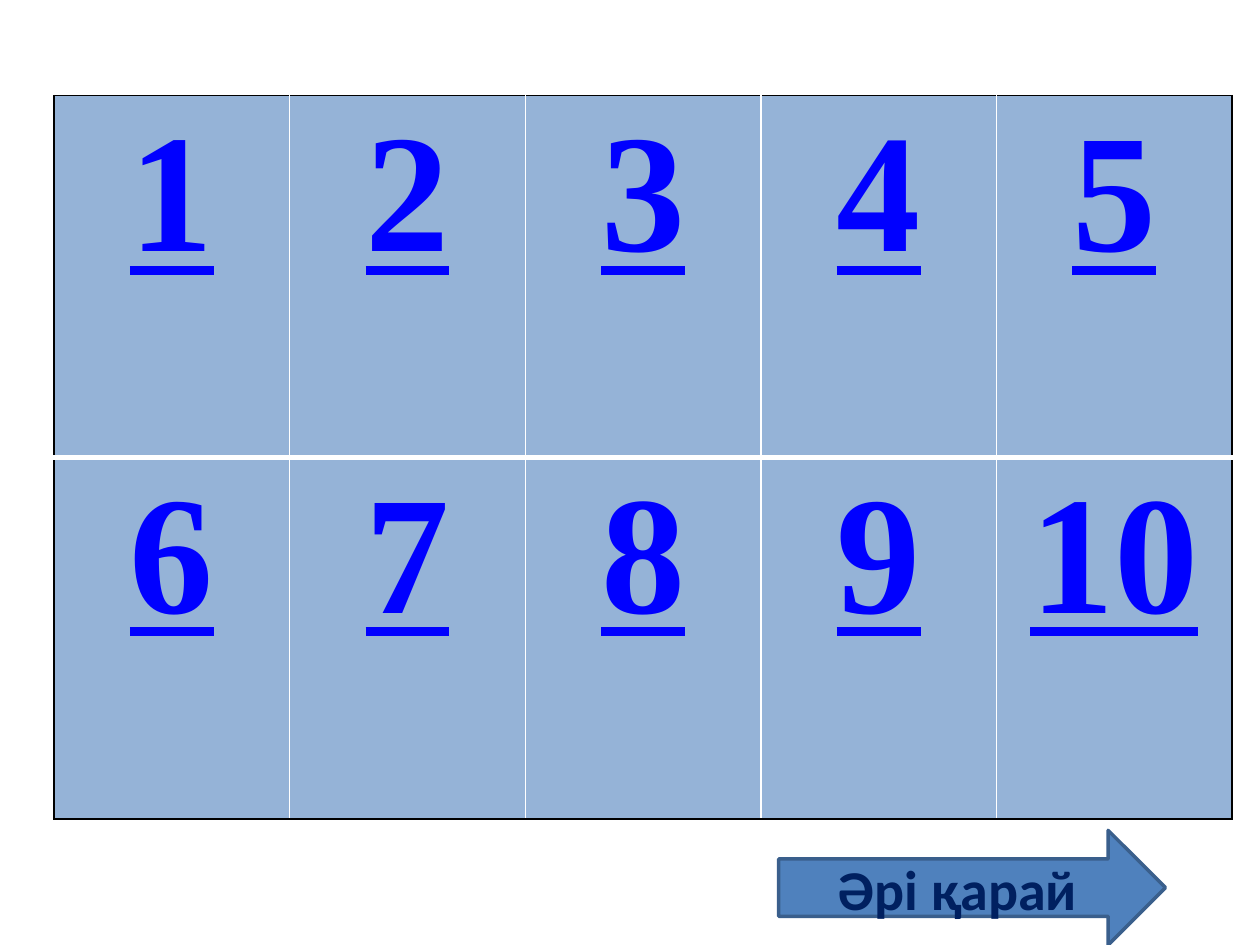
import pptx
import pptx.util
import pptx.dml.color
import pptx.enum.shapes
import pptx.enum.text
import pptx.oxml
import pptx.oxml.ns
from pptx.util import Inches, Pt

RGBColor = pptx.dml.color.RGBColor
CELL_BLUE = RGBColor(0x95, 0xB3, 0xD7)
NUMBER_BLUE = RGBColor(0x00, 0x00, 0xFF)
ARROW_BLUE = RGBColor(0x4F, 0x81, 0xBD)
ARROW_EDGE = RGBColor(0x3A, 0x5F, 0x8C)
NAVY = RGBColor(0x00, 0x20, 0x60)
BLACK = RGBColor(0x00, 0x00, 0x00)
WHITE = RGBColor(0xFF, 0xFF, 0xFF)

# Content
NUMBER_ROWS = [["1", "2", "3", "4", "5"], ["6", "7", "8", "9", "10"]]
NEXT_LABEL = "Әрі қарай"

# Layout in inches
TABLE_LEFT, TABLE_TOP = 0.43, 0.76
COLUMN_WIDTH, ROW_HEIGHT = 1.87, 2.87
ARROW_BOX = (6.18, 6.59, 3.07, 0.91)


def add_border(cell, side, color, width):
    properties = cell._tc.get_or_add_tcPr()
    line = pptx.oxml.parse_xml(
        f'<a:{side} {pptx.oxml.ns.nsdecls("a")} w="{Pt(width)}">'
        f'<a:solidFill><a:srgbClr val="{color}"/></a:solidFill></a:{side}>')
    properties.append(line)


def set_text(text_frame, text, font_name, size, color):
    paragraph = text_frame.paragraphs[0]
    paragraph.text = text
    paragraph.alignment = pptx.enum.text.PP_ALIGN.CENTER
    font = paragraph.font
    font.name, font.size, font.bold = font_name, Pt(size), True
    font.color.rgb = color
    return paragraph


def add_number_table(slide):
    row_count, column_count = len(NUMBER_ROWS), len(NUMBER_ROWS[0])
    table = slide.shapes.add_table(
        row_count, column_count, Inches(TABLE_LEFT), Inches(TABLE_TOP),
        Inches(COLUMN_WIDTH * column_count), Inches(ROW_HEIGHT * row_count)).table
    for row, numbers in enumerate(NUMBER_ROWS):
        for column, number in enumerate(numbers):
            cell = table.cell(row, column)
            paragraph = set_text(cell.text_frame, number, "Times New Roman", 96, NUMBER_BLUE)
            paragraph.font.underline = True
            # Black outside, white inside, thick rule under the first row
            first_row, last_row = row == 0, row == row_count - 1
            add_border(cell, "lnL", BLACK if column == 0 else WHITE, 1)
            add_border(cell, "lnR", BLACK if column == column_count - 1 else WHITE, 1)
            add_border(cell, "lnT", BLACK if first_row else WHITE, 1 if first_row else 3)
            add_border(cell, "lnB", BLACK if last_row else WHITE, 1 if last_row else 3)
            cell.fill.solid()
            cell.fill.fore_color.rgb = CELL_BLUE


def add_next_arrow(slide):
    arrow = slide.shapes.add_shape(
        pptx.enum.shapes.MSO_SHAPE.RIGHT_ARROW, *map(Inches, ARROW_BOX))
    arrow.shadow.inherit = False
    arrow.fill.solid()
    arrow.fill.fore_color.rgb = ARROW_BLUE
    arrow.line.color.rgb = ARROW_EDGE
    arrow.line.width = Pt(2)
    arrow.text_frame.word_wrap = True
    arrow.text_frame.vertical_anchor = pptx.enum.text.MSO_ANCHOR.MIDDLE
    set_text(arrow.text_frame, NEXT_LABEL, "Calibri", 32, NAVY)


def main():
    presentation = pptx.Presentation()
    presentation.slide_width, presentation.slide_height = Inches(10), Inches(7.5)
    slide = presentation.slides.add_slide(presentation.slide_layouts[6])
    add_number_table(slide)
    add_next_arrow(slide)
    presentation.save("out.pptx")


if __name__ == "__main__":
    main()
